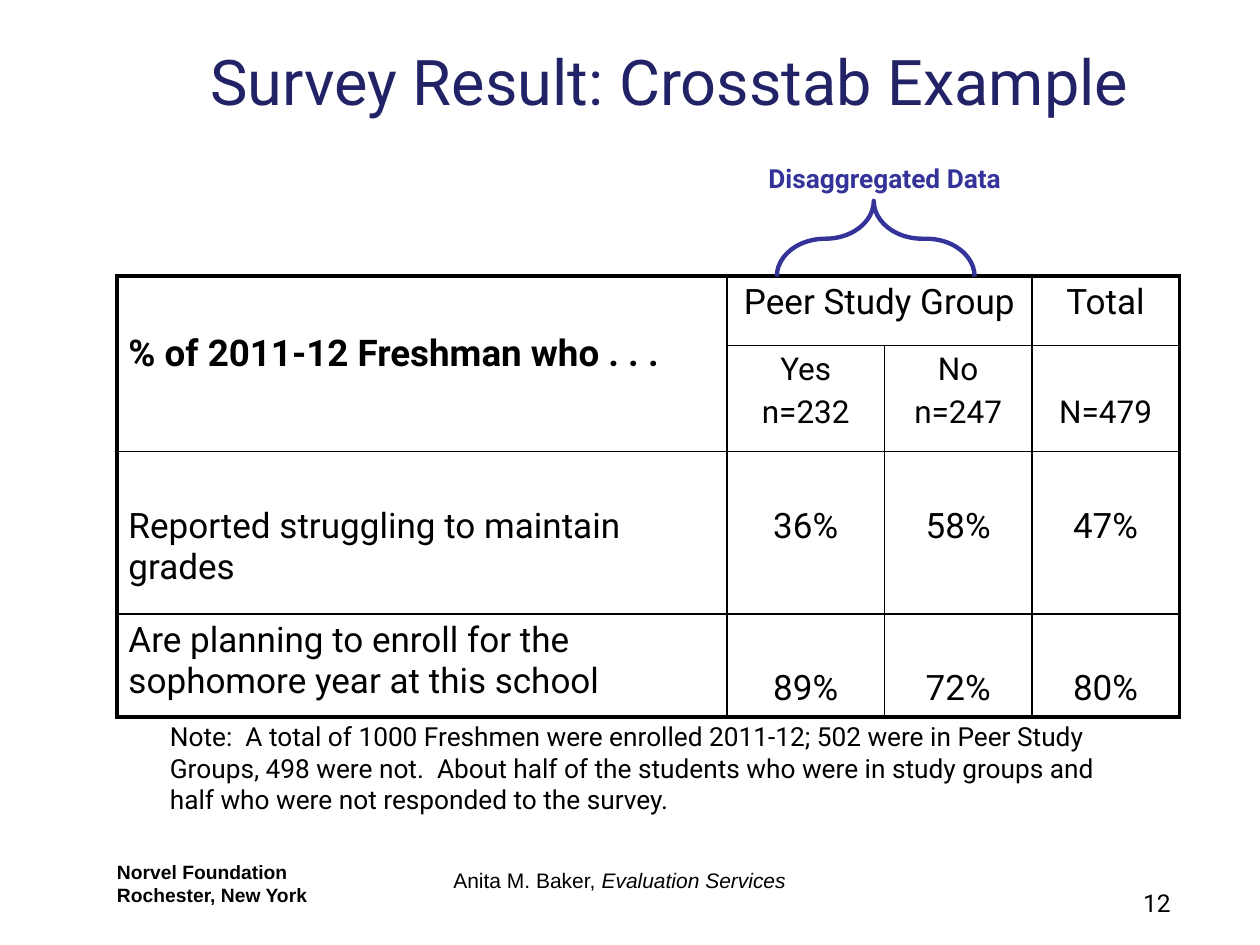
from dataclasses import dataclass
from typing import Optional

from lxml.etree import SubElement
from pptx import Presentation
from pptx.dml.color import RGBColor
from pptx.enum.shapes import MSO_SHAPE as Shape
from pptx.enum.text import MSO_ANCHOR as Anchor, PP_ALIGN as Align
from pptx.oxml.ns import qn
from pptx.util import Inches, Pt


@dataclass(frozen=True)
class Theme:
    title: str = "222267"
    accent: str = "333399"
    ink: str = "000000"
    paper: str = "FFFFFF"
    main_font: str = "Roboto"
    footer_font: str = "Arial"
    title_size: int = 36
    heading_size: int = 21
    body_size: int = 20
    count_size: int = 18
    note_size: int = 15
    page_size: int = 14
    author_size: int = 12
    footer_size: int = 11
    frame_width: float = 2.25
    rule_width: float = 1
    brace_width: float = 2.5


THEME = Theme()

# The slide is a grid of 100 columns by 75 rows
SLIDE_WIDTH, SLIDE_HEIGHT = Inches(10), Inches(7.5)
GRID_COLUMNS, GRID_ROWS = 100, 75


@dataclass(frozen=True)
class Box:
    left: float
    top: float
    width: float
    height: float


@dataclass(frozen=True)
class Style:
    size: float
    color: str = THEME.ink
    bold: bool = False
    font: str = THEME.main_font
    align: Align = Align.LEFT


@dataclass(frozen=True)
class Label:
    box: Box
    lines: tuple[tuple[str, ...], ...]  # runs per paragraph; a second run is italic
    style: Style
    anchor: Anchor = Anchor.TOP


@dataclass(frozen=True)
class Entry:
    row: int
    column: int
    lines: tuple[str, ...]
    style: Style
    lowered: bool = False  # starts one line further down
    span: Optional[tuple[int, int]] = None  # rows, columns


def across(columns: float) -> int:
    return round(SLIDE_WIDTH * columns / GRID_COLUMNS)


def down(rows: float) -> int:
    return round(SLIDE_HEIGHT * rows / GRID_ROWS)


def place(box: Box) -> tuple[int, int, int, int]:
    return across(box.left), down(box.top), across(box.width), down(box.height)


def style_paragraph(paragraph, style: Style) -> None:
    paragraph.alignment = style.align
    font = paragraph.font
    font.name, font.size, font.bold = style.font, Pt(style.size), style.bold
    font.color.rgb = RGBColor.from_string(style.color)


def draw_label(slide, label: Label) -> None:
    frame = slide.shapes.add_textbox(*place(label.box)).text_frame
    frame.word_wrap = True
    frame.vertical_anchor = label.anchor
    for index, runs in enumerate(label.lines):
        paragraph = frame.add_paragraph() if index else frame.paragraphs[0]
        style_paragraph(paragraph, label.style)
        for position, text in enumerate(runs):
            run = paragraph.add_run()
            run.text = text
            if position:
                run.font.italic = True


def draw_border(cell, side: str, width: float) -> None:
    line = SubElement(cell._tc.get_or_add_tcPr(), qn(f"a:ln{side}"), w=str(Pt(width)))
    fill = SubElement(line, qn("a:solidFill"))
    SubElement(fill, qn("a:srgbClr"), val=THEME.ink)


def draw_entry(table, entry: Entry) -> None:
    cell = table.cell(entry.row, entry.column)
    if entry.span:
        rows, columns = entry.span
        cell.merge(table.cell(entry.row + rows - 1, entry.column + columns - 1))
    if entry.lowered:
        # Inset, plus one Roboto line and a gap of a fifth of the type size
        cell.margin_top = Inches(0.05) + Pt(entry.style.size * 1.37)
    for index, text in enumerate(entry.lines):
        frame = cell.text_frame
        paragraph = frame.add_paragraph() if index else frame.paragraphs[0]
        if index:
            paragraph.space_before = Pt(entry.style.size * 0.2)
        style_paragraph(paragraph, entry.style)
        paragraph.add_run().text = text


def draw_crosstab(slide, left: float, top: float, widths: list[float],
                  heights: list[float], entries: list[Entry]) -> None:
    box = Box(left, top, sum(widths), sum(heights))
    table = slide.shapes.add_table(len(heights), len(widths), *place(box)).table
    table.first_row = table.horz_banding = False
    for column, width in zip(table.columns, widths):
        column.width = across(width)
    for row, height in zip(table.rows, heights):
        row.height = down(height)

    # Heavy frame outside, thin rules inside
    last_row, last_column = len(heights) - 1, len(widths) - 1
    for r in range(len(heights)):
        for c in range(len(widths)):
            cell = table.cell(r, c)
            cell.margin_left = cell.margin_right = Inches(0.09)
            outer = {"L": c == 0, "R": c == last_column, "T": r == 0, "B": r == last_row}
            for side, is_outer in outer.items():
                draw_border(cell, side, THEME.frame_width if is_outer else THEME.rule_width)
            cell.fill.background()
    for entry in entries:
        draw_entry(table, entry)


def draw_brace(slide, box: Box) -> None:
    brace = slide.shapes.add_shape(Shape.LEFT_BRACE, *place(box))
    brace.rotation = 90
    brace.adjustments[0], brace.adjustments[1] = 0.68, 0.51
    brace.shadow.inherit = False
    brace.fill.background()
    brace.line.color.rgb = RGBColor.from_string(THEME.accent)
    brace.line.width = Pt(THEME.brace_width)


HEADING = Style(THEME.heading_size, bold=True)
BODY = Style(THEME.body_size)
CENTERED = Style(THEME.body_size, align=Align.CENTER)
COUNT = Style(THEME.count_size, align=Align.CENTER)

HEADER_ENTRIES = [
    Entry(0, 0, ("% of 2011-12 Freshman who . . .",), HEADING, lowered=True, span=(2, 1)),
    Entry(0, 1, ("Peer Study Group",), CENTERED, span=(1, 2)),
    Entry(0, 3, ("Total",), CENTERED),
    Entry(1, 1, ("Yes", "n=232"), COUNT),
    Entry(1, 2, ("No", "n=247"), COUNT),
    Entry(1, 3, ("N=479",), COUNT, lowered=True),
]
QUESTION_ENTRIES = [
    Entry(2, 0, ("Reported struggling to maintain grades",), BODY, lowered=True),
    Entry(3, 0, ("Are planning to enroll for the sophomore year at this school",), BODY),
]
SHARES = {2: ("36%", "58%", "47%"), 3: ("89%", "72%", "80%")}
SHARE_ENTRIES = [Entry(row, column, (share,), CENTERED, lowered=True)
                 for row, shares in SHARES.items()
                 for column, share in enumerate(shares, start=1)]

NOTE = ("Note:  A total of 1000 Freshmen were enrolled 2011-12; 502 were in Peer Study "
        "Groups, 498 were not.  About half of the students who were in study groups and "
        "half who were not responded to the survey.")
LABELS = [
    Label(Box(14.1, 1.6, 78.1, 8.3), (("Survey Result: Crosstab Example",),),
          Style(THEME.title_size, THEME.title, align=Align.CENTER), Anchor.BOTTOM),
    Label(Box(60, 12.4, 22.7, 3.5), (("Disaggregated Data",),),
          Style(THEME.note_size, THEME.accent, bold=True)),
    Label(Box(12.5, 56.7, 77.5, 8.6), ((NOTE,),), Style(THEME.note_size)),
    Label(Box(8.3, 67.8, 20.8, 4.7), (("Norvel Foundation",), ("Rochester, New York",)),
          Style(THEME.footer_size, bold=True, font=THEME.footer_font)),
    Label(Box(35, 68.4, 31.7, 5.7), (("Anita M. Baker, ", "Evaluation Services"),),
          Style(THEME.author_size, font=THEME.footer_font)),
    Label(Box(88.4, 70, 5.5, 5), (("12",),), Style(THEME.page_size, align=Align.RIGHT)),
]


def main() -> None:
    deck = Presentation()
    deck.slide_width, deck.slide_height = SLIDE_WIDTH, SLIDE_HEIGHT
    slide = deck.slides.add_slide(deck.slide_layouts[6])
    slide.background.fill.solid()
    slide.background.fill.fore_color.rgb = RGBColor.from_string(THEME.paper)

    # Crosstab with the brace over its disaggregated columns
    draw_crosstab(slide, 9.3, 21.9, [48.4, 12.5, 11.7, 11.7], [5.5, 8.2, 12.9, 8.2],
                  HEADER_ENTRIES + QUESTION_ENTRIES + SHARE_ENTRIES)
    draw_brace(slide, Box(66.5, 11.1, 6, 15.7))

    # Title, caption, note and footer
    for label in LABELS:
        draw_label(slide, label)
    deck.save("out.pptx")


if __name__ == "__main__":
    main()
